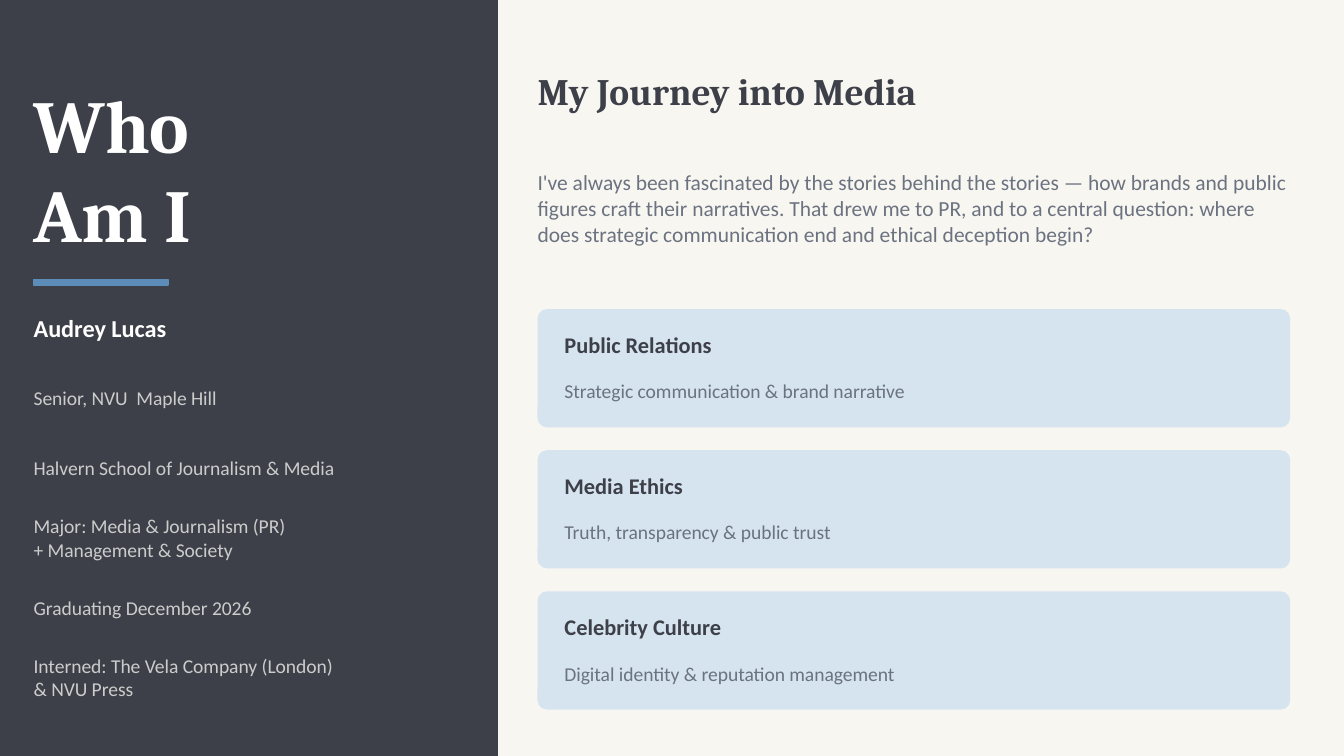
from pptx import Presentation
from pptx.dml.color import RGBColor
from pptx.enum import shapes, text
from pptx.util import Inches, Pt

COLORS = {
    "paper": "F8F6F1", "dark": "3D4048", "blue": "5B8DB8", "card": "D6E4F0",
    "white": "FFFFFF", "light": "CCCCCC", "gray": "6B7280",
}
TITLE = "Who\nAm I"
NAME = "Audrey Lucas"
FACTS = [
    "Senior, NVU  Maple Hill",
    "Halvern School of Journalism & Media",
    "Major: Media & Journalism (PR)\n+ Management & Society",
    "Graduating December 2026",
    "Interned: The Vela Company (London)\n& NVU Press",
]
HEADING = "My Journey into Media"
INTRO = (
    "I've always been fascinated by the stories behind the stories — how brands "
    "and public figures craft their narratives. That drew me to PR, and to a "
    "central question: where does strategic communication end and ethical "
    "deception begin?"
)
CARDS = [
    ("Public Relations", "Strategic communication & brand narrative"),
    ("Media Ethics", "Truth, transparency & public trust"),
    ("Celebrity Culture", "Digital identity & reputation management"),
]
WIDTH = 10
HEIGHT = WIDTH * 9 / 16
KIND = shapes.MSO_SHAPE


def color(name):
    return RGBColor.from_string(COLORS[name])


def block(slide, box, fill, kind=KIND.RECTANGLE, line=True):
    shape = slide.shapes.add_shape(kind, *map(Inches, box))
    shape.shadow.inherit = False
    shape.fill.solid()
    shape.fill.fore_color.rgb = color(fill)
    if line:
        shape.line.color.rgb = color(fill)
        shape.line.width = Pt(1)
    else:
        shape.line.fill.background()
    return shape


def write(slide, box, words, size, tone, bold=False, font="Calibri"):
    frame = slide.shapes.add_textbox(*map(Inches, box)).text_frame
    frame.word_wrap = True
    frame.vertical_anchor = text.MSO_ANCHOR.MIDDLE
    frame.margin_left = frame.margin_right = 0
    frame.margin_top = frame.margin_bottom = 0
    frame.text = words
    for para in frame.paragraphs:
        for run in para.runs:
            run.font.name = font
            run.font.size = Pt(size)
            run.font.bold = bold
            run.font.color.rgb = color(tone)


def sidebar(slide):
    left, top, step = 0.25, 2.2, 0.52
    block(slide, (0, 0, 3.7, HEIGHT), "dark")
    write(slide, (left, 0.45, 3.15, 1.6), TITLE, 40, "white", True, "Cambria")
    block(slide, (left, 2.08, 1, 0.04), "blue")
    write(slide, (left, top, 3.18, 0.48), NAME, 13, "white", True)
    for i, fact in enumerate(FACTS, 1):
        write(slide, (left, top + i * step, 3.18, 0.48), fact, 10.5, "light")


def journey(slide):
    left, wide, pad = 4, 5.6, 0.2
    write(slide, (left, 0.45, wide, 0.45), HEADING, 20, "dark", True, "Cambria")
    write(slide, (left, 1.02, wide, 1.05), INTRO, 11.5, "gray")
    for i, (head, note) in enumerate(CARDS):
        top = 2.3 + i * 1.05
        card = block(slide, (left, top, wide, 0.88), "card",
                     KIND.ROUNDED_RECTANGLE, line=False)
        card.adjustments[0] = 0.08
        inner = wide - 2 * pad
        write(slide, (left + pad, top + 0.1, inner, 0.32), head, 12, "dark", True)
        write(slide, (left + pad, top + 0.46, inner, 0.3), note, 10.5, "gray")


def main():
    deck = Presentation()
    deck.slide_width, deck.slide_height = Inches(WIDTH), Inches(HEIGHT)
    slide = deck.slides.add_slide(deck.slide_layouts[6])
    slide.background.fill.solid()
    slide.background.fill.fore_color.rgb = color("paper")
    sidebar(slide)
    journey(slide)
    deck.save("out.pptx")


if __name__ == "__main__":
    main()
